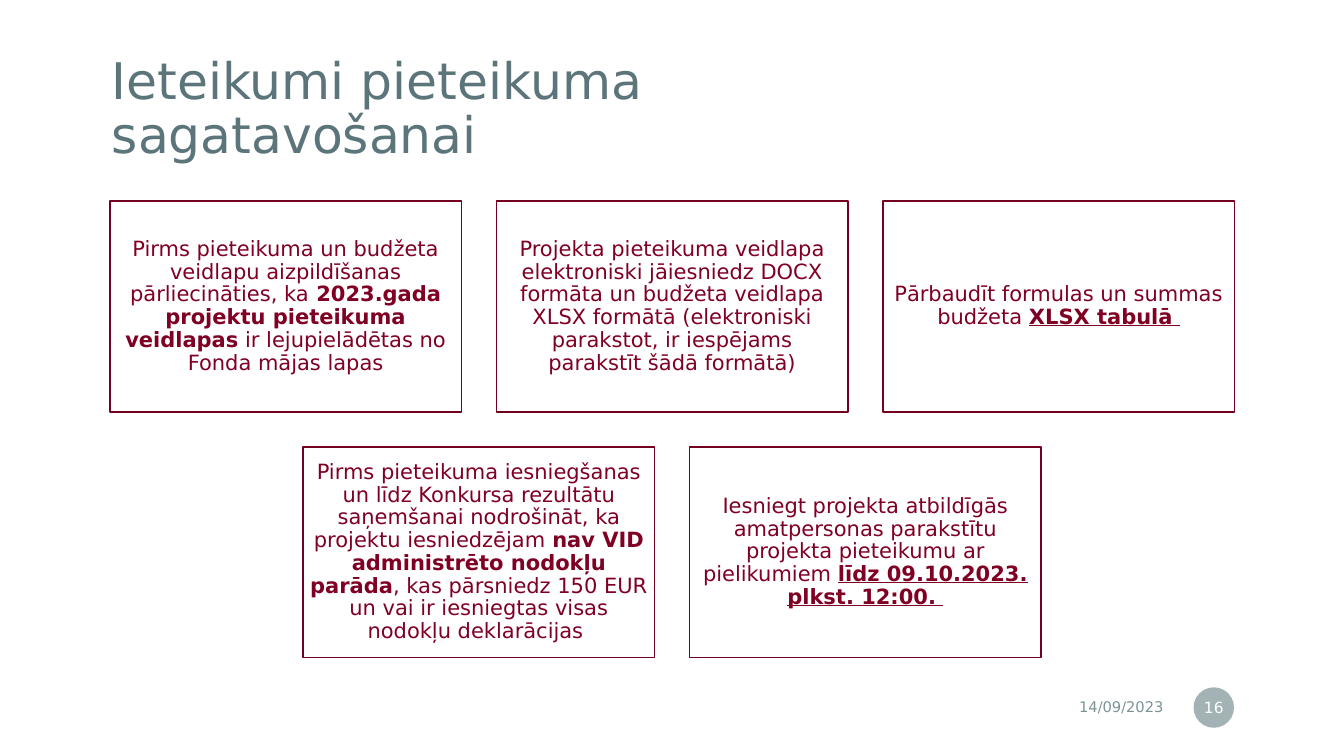
from lxml import etree
from pptx import Presentation
from pptx.dml.color import RGBColor
from pptx.enum.shapes import MSO_SHAPE
from pptx.enum.text import MSO_ANCHOR, PP_ALIGN
from pptx.oxml.ns import qn
from pptx.util import Cm, Pt

RECT, OVAL = MSO_SHAPE.RECTANGLE, MSO_SHAPE.OVAL
LEFT, CENTER, RIGHT = PP_ALIGN.LEFT, PP_ALIGN.CENTER, PP_ALIGN.RIGHT
MIDDLE = MSO_ANCHOR.MIDDLE
FONT = "DejaVu Sans"
COLUMNS = 3
GAP = 0.88
BOLD = {"bold": True}
MARKED = {"bold": True, "underline": True}

TIPS = [
    [("Pirms pieteikuma un budžeta veidlapu aizpildīšanas pārliecināties, ka", {}),
     (" 2023.gada projektu pieteikuma veidlapas", BOLD),
     (" ir lejupielādētas no Fonda mājas lapas", {})],
    [("Projekta pieteikuma veidlapa elektroniski jāiesniedz DOCX formāta un "
      "budžeta veidlapa XLSX formātā (elektroniski parakstot, ir iespējams "
      "parakstīt šādā formātā)", {})],
    [("Pārbaudīt formulas un summas budžeta ", {}),
     ("XLSX tabulā ", MARKED)],
    [("Pirms pieteikuma iesniegšanas un līdz Konkursa rezultātu saņemšanai "
      "nodrošināt, ka projektu iesniedzējam ", {}),
     ("nav VID administrēto nodokļu parāda", BOLD),
     (", kas pārsniedz 150 EUR un vai ir iesniegtas visas nodokļu deklarācijas ", {})],
    [("Iesniegt projekta atbildīgās amatpersonas parakstītu projekta "
      "pieteikumu ar pielikumiem ", {}),
     ("līdz 09.10.2023. plkst. 12:00. ", MARKED)],
]


def rgb(value):
    return RGBColor.from_string(value)


def write(s, runs, size, color, align=LEFT, inset=(0.25, 0.13), spacing=1.0):
    tf = s.text_frame
    tf.word_wrap = True
    tf.vertical_anchor = MIDDLE
    tf.margin_left = tf.margin_right = Cm(inset[0])
    tf.margin_top = tf.margin_bottom = Cm(inset[1])
    p = tf.paragraphs[0]
    p.alignment = align
    p.line_spacing = spacing
    for text, style in runs:
        r = p.add_run()
        r.text = text
        r.font.name = FONT
        r.font.size = Pt(size)
        r.font.color.rgb = rgb(color)
        r.font.bold = style.get("bold", False)
        r.font.underline = style.get("underline", False)


def add_label(slide, box, text, size, color, **fmt):
    s = slide.shapes.add_textbox(*map(Cm, box))
    write(s, [(text, {})], size, color, **fmt)


def add_panel(slide, kind, box, fill, line=None):
    s = slide.shapes.add_shape(kind, *map(Cm, box))
    s.shadow.inherit = False
    s.fill.solid()
    s.fill.fore_color.rgb = rgb(fill)
    if line:
        s.line.color.rgb = rgb(line)
        s.line.width = Pt(1)
    else:
        s.line.fill.background()
    return s


def add_title(slide, box):
    add_label(slide, box, "Ieteikumi pieteikuma sagatavošanai", 36, "5B757A",
              inset=(0.51, 0.51), spacing=0.9)


def add_tips(slide, box):
    left, top, width, height = box
    card_w = (width - (COLUMNS - 1) * GAP) / COLUMNS
    card_h = (height - GAP) / 2
    for start in range(0, len(TIPS), COLUMNS):
        row = TIPS[start:start + COLUMNS]
        x = left + (COLUMNS - len(row)) * (card_w + GAP) / 2
        y = top + start // COLUMNS * (card_h + GAP)
        for i, runs in enumerate(row):
            card = (x + i * (card_w + GAP), y, card_w, card_h)
            s = add_panel(slide, RECT, card, "FFFFFF", "740021")
            write(s, runs, 15, "800024", align=CENTER, inset=(0.15, 0.15),
                  spacing=0.9)


def add_footer(slide, box):
    left, top, width, height = box
    add_label(slide, (left, top + 0.05, 7.65, 0.89), "14/09/2023", 10.5,
              "7C9396", align=RIGHT)
    badge = (left + width - height, top, height, height)
    s = add_panel(slide, OVAL, badge, "7C9396")
    color = s.fill._xPr.find(qn("a:solidFill"))[0]
    etree.SubElement(color, qn("a:alpha"), val="70000")
    write(s, [("16", {})], 11, "FFFFFF", align=CENTER, inset=(0.05, 0.13))


def main():
    prs = Presentation()
    prs.slide_width, prs.slide_height = Cm(33.87), Cm(19.05)
    slide = prs.slides.add_slide(prs.slide_layouts[6])
    add_title(slide, (2.31, 1.22, 22.17, 3.12))
    add_tips(slide, (2.77, 5.07, 28.34, 11.5))
    add_footer(slide, (21.92, 17.32, 9.18, 1.02))
    prs.save("out.pptx")


if __name__ == "__main__":
    main()
